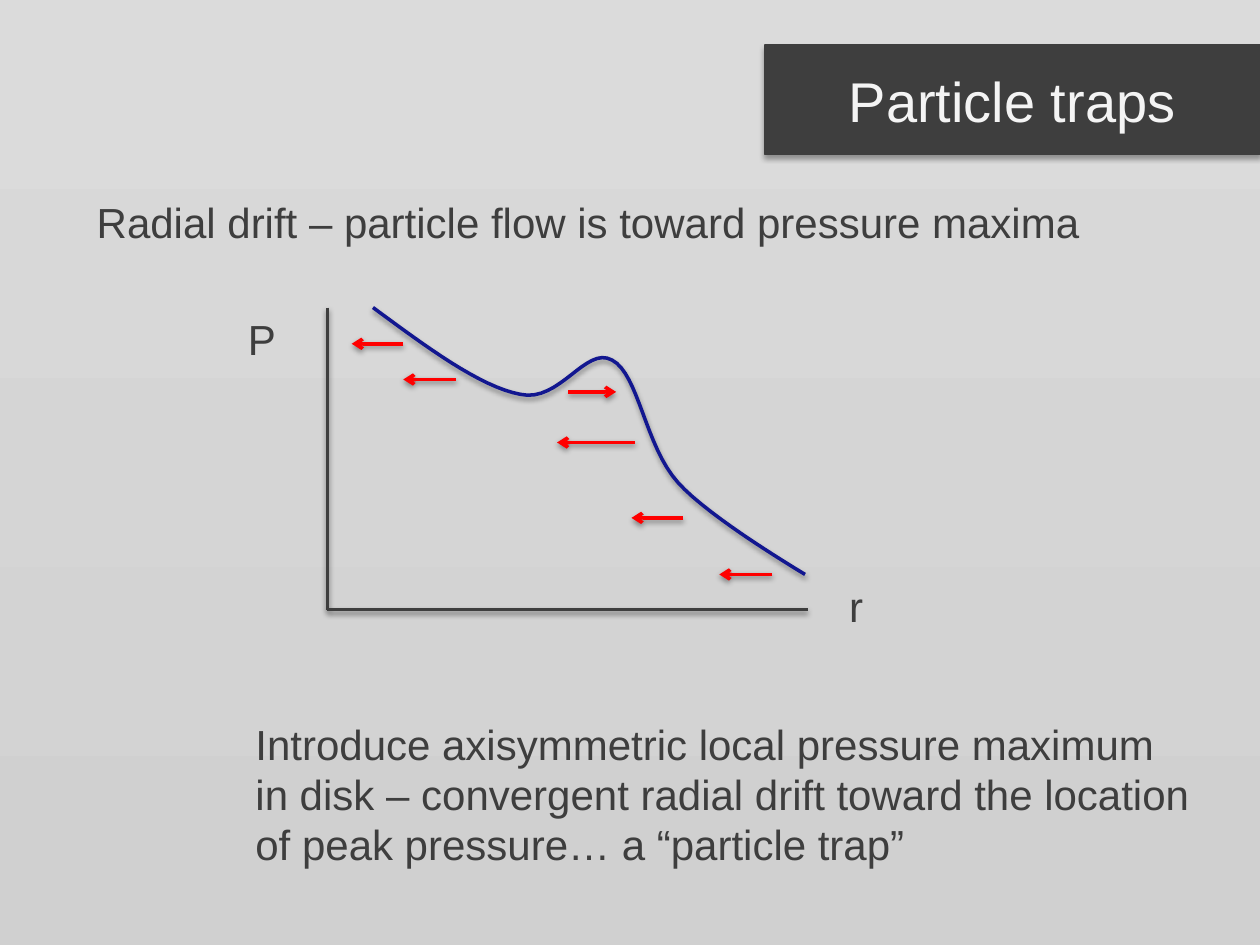
from dataclasses import dataclass

from lxml import etree
from pptx import Presentation
from pptx.dml.color import RGBColor
from pptx.enum import shapes, text
from pptx.oxml import ns
from pptx.util import Cm, Pt

DARK = RGBColor(0x3E, 0x3E, 0x3E)
LIGHT = RGBColor(0xF4, 0xF4, 0xF4)
RED = RGBColor(0xFF, 0x00, 0x00)
BLUE = RGBColor(0x12, 0x17, 0x90)
TOP = RGBColor(0xDB, 0xDB, 0xDB)
BASE = RGBColor(0xD0, 0xD0, 0xD0)
FONT = "Arial"
STEPS = 16


@dataclass
class Label:
    words: str
    left: float
    top: float
    width: float
    height: float


@dataclass
class Line:
    x1: float
    y1: float
    x2: float
    y2: float
    color: RGBColor = DARK
    arrow: bool = False


def drift(x1: float, x2: float, y: float) -> Line:
    return Line(x1, y, x2, y, RED, True)


LABELS = [
    Label("Radial drift – particle flow is toward pressure maxima", 1.7, 3.84, 20.52, 1.27),
    Label("r", 16.87, 11.58, 0.79, 1.27),
    Label("P", 4.75, 6.2, 1.07, 1.27),
    Label(
        "Introduce axisymmetric local pressure maximum\n"
        "in disk – convergent radial drift toward the location\n"
        "of peak pressure… a “particle trap”",
        4.9, 14.35, 19.53, 3.33,
    ),
]
AXES = [Line(6.6, 6.2, 6.6, 12.29), Line(6.6, 12.29, 16.28, 12.29)]
DRIFTS = [
    drift(15.57, 14.5, 11.58),
    drift(13.77, 12.73, 10.44),
    drift(12.8, 11.23, 8.92),
    drift(9.19, 8.13, 7.65),
    drift(8.13, 7.09, 6.93),
    drift(11.46, 12.42, 7.9),
]
START = (7.52, 6.2)
CURVES = [
    ((8.59, 6.99), (9.68, 7.8), (10.49, 7.95)),
    ((11.28, 8.13), (11.81, 6.96), (12.34, 7.26)),
    ((12.88, 7.54), (13, 8.99), (13.67, 9.73)),
    ((14.3, 10.44), (16.23, 11.58), (16.23, 11.58)),
]


def style(frame, size: int, color: RGBColor) -> None:
    for para in frame.paragraphs:
        for run in para.runs:
            run.font.name = FONT
            run.font.size = Pt(size)
            run.font.color.rgb = color


def shade(shape, dist: float, alpha: int) -> None:
    effects = etree.SubElement(shape._element.spPr, ns.qn("a:effectLst"))
    outer = etree.SubElement(
        effects, ns.qn("a:outerShdw"), blurRad=str(Pt(3.1)),
        dist=str(Pt(dist)), dir="5400000", rotWithShape="0",
    )
    tint = etree.SubElement(outer, ns.qn("a:srgbClr"), val="000000")
    etree.SubElement(tint, ns.qn("a:alpha"), val=str(alpha * 1000))


def stroke(shape, color: RGBColor, arrow: bool = False) -> None:
    shape.line.color.rgb = color
    shape.line.width = Pt(2)
    if arrow:
        edge = shape.line._get_or_add_ln()
        etree.SubElement(edge, ns.qn("a:tailEnd"), type="arrow")
    shade(shape, 1.6, 38)


def draw_title(slide) -> None:
    title = slide.shapes.title
    title.left, title.top = Cm(15.42), Cm(0.91)
    title.width, title.height = Cm(9.98), Cm(2.21)
    title.fill.solid()
    title.fill.fore_color.rgb = DARK
    title.line.color.rgb = DARK
    title.line.width = Pt(0.75)
    shade(title, 1.8, 35)
    frame = title.text_frame
    frame.text = "Particle traps"
    frame.vertical_anchor = text.MSO_ANCHOR.MIDDLE
    frame.paragraphs[0].alignment = text.PP_ALIGN.CENTER
    style(frame, 32, LIGHT)


def draw_label(slide, label: Label) -> None:
    box = slide.shapes.add_textbox(
        Cm(label.left), Cm(label.top), Cm(label.width), Cm(label.height)
    )
    frame = box.text_frame
    frame.text = label.words
    frame.word_wrap = False
    frame.auto_size = text.MSO_AUTO_SIZE.SHAPE_TO_FIT_TEXT
    style(frame, 24, DARK)


def draw_line(slide, line: Line) -> None:
    shape = slide.shapes.add_connector(
        shapes.MSO_CONNECTOR.STRAIGHT,
        Cm(line.x1), Cm(line.y1), Cm(line.x2), Cm(line.y2),
    )
    stroke(shape, line.color, line.arrow)


def bend(a: float, b: float, c: float, d: float, t: float) -> float:
    s = 1 - t
    return s**3 * a + 3 * s * s * t * b + 3 * s * t * t * c + t**3 * d


def draw_curve(slide) -> None:
    points = []
    start = START
    for one, two, end in CURVES:
        for step in range(1, STEPS + 1):
            points.append(tuple(
                Cm(bend(*axis, step / STEPS)) for axis in zip(start, one, two, end)
            ))
        start = end
    path = slide.shapes.build_freeform(Cm(START[0]), Cm(START[1]))
    path.add_line_segments(points, close=False)
    curve = path.convert_to_shape()
    curve.fill.background()
    stroke(curve, BLUE)


def main() -> None:
    deck = Presentation()
    deck.slide_width, deck.slide_height = Cm(25.4), Cm(19.05)
    slide = deck.slides.add_slide(deck.slide_layouts[5])
    fill = slide.background.fill
    fill.gradient()
    fill.gradient_angle = 270
    for stop, color in zip(fill.gradient_stops, (TOP, BASE)):
        stop.color.rgb = color
    draw_title(slide)
    for label in LABELS:
        draw_label(slide, label)
    for line in AXES + DRIFTS:
        draw_line(slide, line)
    draw_curve(slide)
    deck.save("out.pptx")


if __name__ == "__main__":
    main()
